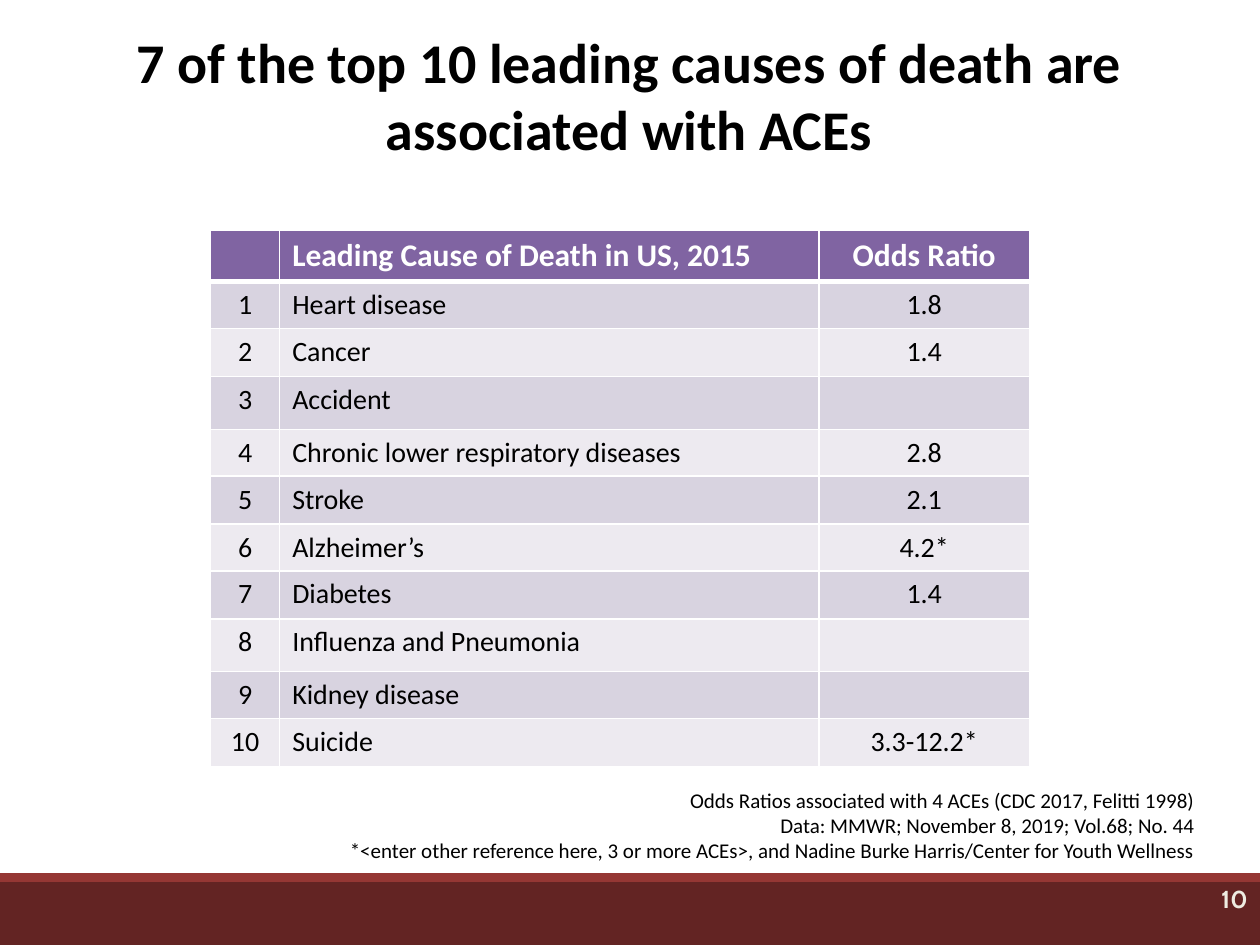
import dataclasses

import lxml.etree
import pptx
import pptx.dml.color
import pptx.enum.shapes
import pptx.enum.text
import pptx.oxml.ns
import pptx.util

Inches = pptx.util.Inches
Align = pptx.enum.text.PP_ALIGN
Anchor = pptx.enum.text.MSO_ANCHOR


@dataclasses.dataclass(frozen=True)
class Theme:
    font: str = "Calibri"
    num_font: str = "Cabin"
    ink: str = "000000"
    white: str = "FFFFFF"
    cream: str = "EEECE1"
    head: str = "8064A2"
    bands: tuple = ("D8D3E0", "EDEAF0")
    base: str = "632423"
    trim: str = "953734"
    title: int = 32
    label: int = 18
    body: int = 16
    page: int = 14
    note: int = 12


def color(code):
    return pptx.dml.color.RGBColor.from_string(code)


def write(frame, text, *, size, font, ink, bold=False, align=Align.LEFT):
    for i, line in enumerate(text.split("\n")):
        para = frame.add_paragraph() if i else frame.paragraphs[0]
        para.alignment = align
        if not line:
            end = lxml.etree.SubElement(para._p, pptx.oxml.ns.qn("a:endParaRPr"))
            end.set("sz", str(size * 100))
            continue
        run = para.add_run()
        run.text = line
        run.font.size = pptx.util.Pt(size)
        run.font.name = font
        run.font.bold = bold
        run.font.color.rgb = color(ink)


class Deck:
    def __init__(self, theme):
        self.theme = theme
        self.file = pptx.Presentation()
        self.file.slide_width = Inches(10)
        self.file.slide_height = Inches(7.5)
        self.slide = self.file.slides.add_slide(self.file.slide_layouts[6])

    def text(self, text, left, top, width, height, **style):
        box = self.slide.shapes.add_textbox(
            Inches(left), Inches(top), Inches(width), Inches(height))
        box.text_frame.word_wrap = True
        write(box.text_frame, text, **style)

    def bar(self, top, height, fill):
        shape = self.slide.shapes.add_shape(
            pptx.enum.shapes.MSO_SHAPE.RECTANGLE,
            Inches(0), Inches(top), Inches(10), Inches(height))
        shape.shadow.inherit = False
        shape.fill.solid()
        shape.fill.fore_color.rgb = color(fill)
        shape.line.fill.background()

    def edge(self, cell, low):
        props = cell._tc.get_or_add_tcPr()
        sides = (("lnL", 1), ("lnR", 1), ("lnT", 1), ("lnB", low))
        for i, (side, width) in enumerate(sides):
            line = lxml.etree.Element(pptx.oxml.ns.qn("a:" + side))
            line.set("w", str(pptx.util.Pt(width)))
            fill = lxml.etree.SubElement(line, pptx.oxml.ns.qn("a:solidFill"))
            tint = lxml.etree.SubElement(fill, pptx.oxml.ns.qn("a:srgbClr"))
            tint.set("val", self.theme.white)
            props.insert(i, line)

    def table(self, rows, left, top, widths, heights):
        theme = self.theme
        table = self.slide.shapes.add_table(
            len(rows), len(widths), Inches(left), Inches(top),
            Inches(sum(widths)), Inches(sum(heights))).table
        for col, width in zip(table.columns, widths):
            col.width = Inches(width)
        for r, (row, height) in enumerate(zip(rows, heights)):
            table.rows[r].height = Inches(height)
            top_row = r == 0
            for c, text in enumerate(row):
                cell = table.cell(r, c)
                cell.fill.solid()
                cell.fill.fore_color.rgb = color(
                    theme.head if top_row else theme.bands[(r - 1) % 2])
                cell.vertical_anchor = Anchor.MIDDLE if top_row else Anchor.TOP
                self.edge(cell, 3 if r < 1 else 1)
                write(cell.text_frame, text, font=theme.font, bold=top_row,
                      size=theme.label if top_row else theme.body,
                      ink=theme.white if top_row else theme.ink,
                      align=Align.LEFT if c == 1 else Align.CENTER)


def main():
    theme = Theme()
    deck = Deck(theme)
    deck.bar(7, 0.5, theme.base)
    deck.bar(6.93, 0.07, theme.trim)

    causes = [
        ("Heart disease", "1.8"),
        ("Cancer", "1.4"),
        ("Accident", ""),
        ("Chronic lower respiratory diseases", "2.8"),
        ("Stroke", "2.1"),
        ("Alzheimer’s", "4.2*"),
        ("Diabetes", "1.4"),
        ("Influenza and Pneumonia", ""),
        ("Kidney disease", ""),
        ("Suicide", "3.3-12.2*"),
    ]
    rows = [("", "Leading Cause of Death in US, 2015", "Odds Ratio")]
    rows += [(str(i), *cause) for i, cause in enumerate(causes, 1)]
    cycle = [0.37, 0.38, 0.42, 0.37, 0.38]
    deck.table(rows, 1.67, 1.83, [0.55, 4.28, 1.67], [0.4] + cycle * 2)

    deck.text("Odds Ratios associated with 4 ACEs (CDC 2017, Felitti 1998)\n"
              "Data: MMWR; November 8, 2019; Vol.68; No. 44\n"
              "*<enter other reference here, 3 or more ACEs>, "
              "and Nadine Burke Harris/Center for Youth Wellness",
              2, 6.2, 7.58, 0.71, size=theme.note, font=theme.font,
              ink=theme.ink, align=Align.RIGHT)
    deck.text("10", 8.67, 6.97, 1.33, 0.51, size=theme.page,
              font=theme.num_font, ink=theme.cream, bold=True,
              align=Align.RIGHT)
    deck.text("7 of the top 10 leading causes of death are associated with ACEs",
              0.33, 0.17, 9.33, 1.48, size=theme.title, font=theme.font,
              ink=theme.ink, bold=True, align=Align.CENTER)
    deck.file.save("out.pptx")


if __name__ == "__main__":
    main()
